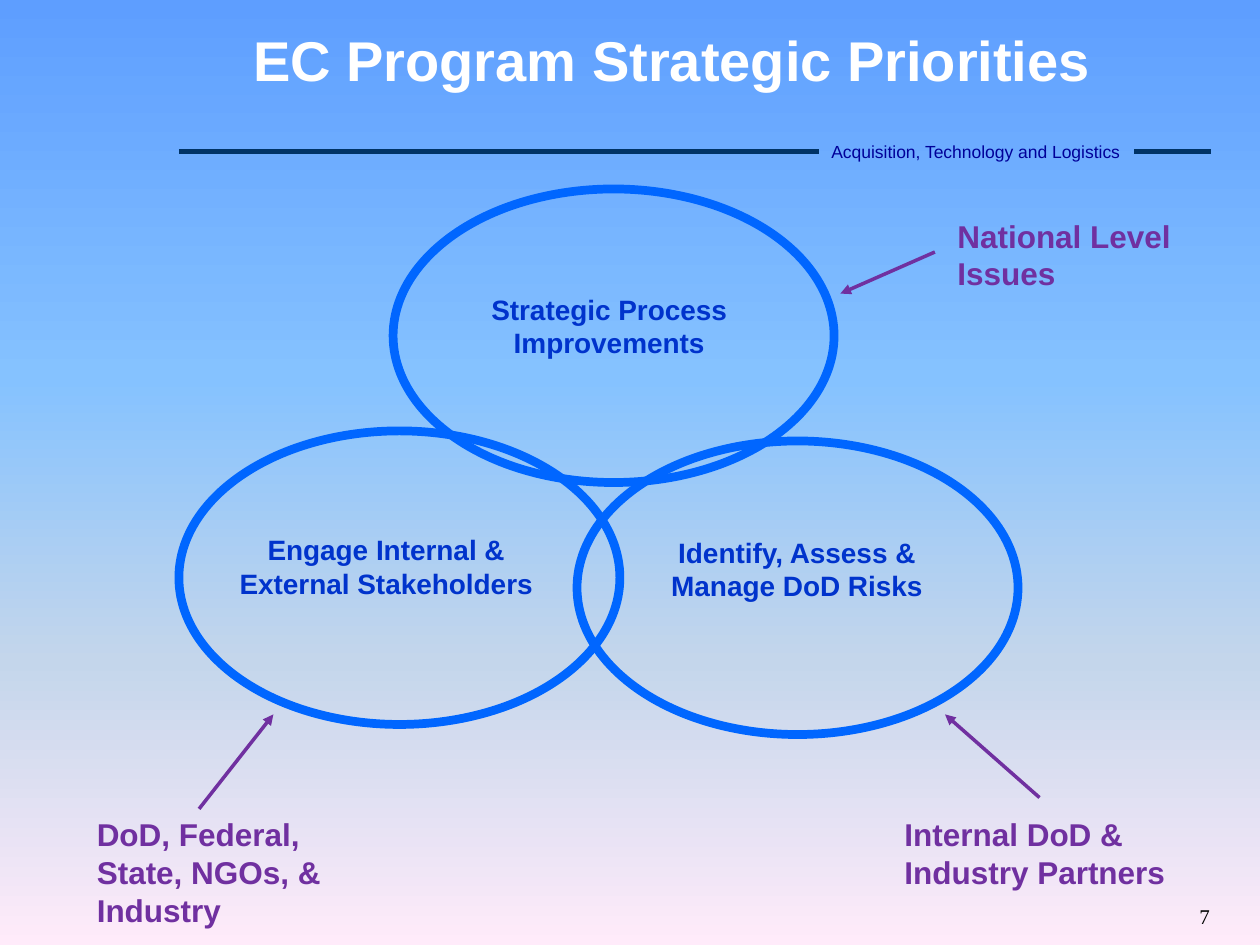
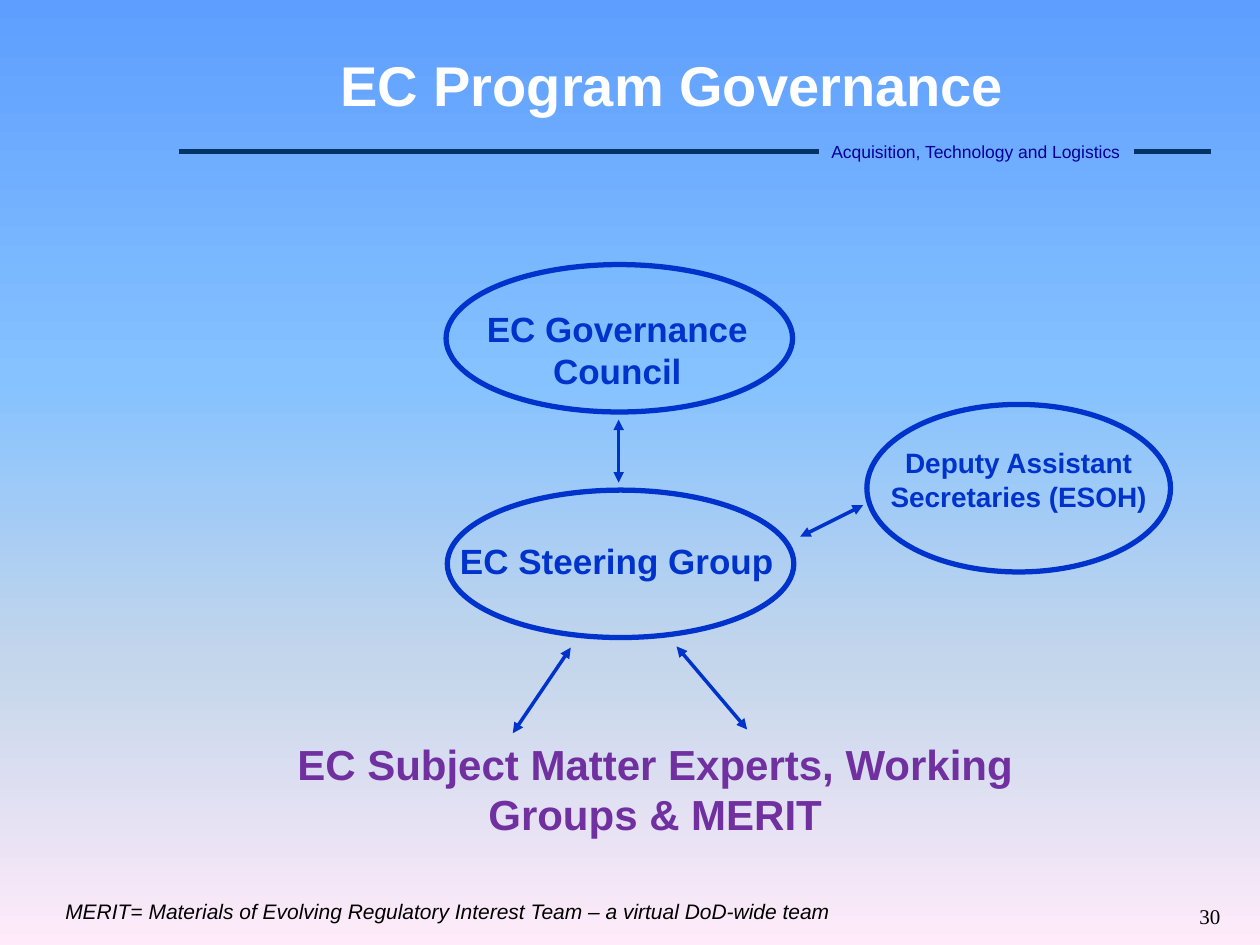
"""Build the two EC program slides."""
from copy import deepcopy

from lxml import etree
from pptx import Presentation
from pptx.dml.color import RGBColor
from pptx.enum.shapes import MSO_CONNECTOR, MSO_SHAPE
from pptx.enum.text import MSO_ANCHOR, PP_ALIGN
from pptx.oxml.ns import qn
from pptx.util import Inches, Pt

STRAIGHT, ELLIPSE = MSO_CONNECTOR.STRAIGHT, MSO_SHAPE.OVAL
LEFT, CENTER = PP_ALIGN.LEFT, PP_ALIGN.CENTER
TOP, MIDDLE = MSO_ANCHOR.TOP, MSO_ANCHOR.MIDDLE
NAVY, LABEL_BLUE, RING_BLUE, BLUE = "003366", "000099", "0066FF", "0033CC"
PURPLE, WHITE, BLACK = "7030A0", "FFFFFF", "000000"
SKY = [(0, "5E9EFF"), (0.4, "85C2FF"), (0.7, "C4D6EB"), (1, "FFEBFA")]


def rgb(color):
    """Turn a hex string into a colour."""
    return RGBColor.from_string(color)


def paint_background(master):
    """Give every slide the vertical sky gradient."""
    fill = master.background.fill
    fill.gradient()
    fill.gradient_angle = 270
    stops = master.element.find(".//" + qn("a:gsLst"))
    while len(stops) < len(SKY):
        stops.append(deepcopy(stops[0]))
    for stop, (position, color) in zip(fill.gradient_stops, SKY):
        stop.position = position
        stop.color.rgb = rgb(color)


def add_text(s, text, box, size, color, align=LEFT, anchor=TOP, wrap=True, **font):
    """Add a one-paragraph text box."""
    tf = s.shapes.add_textbox(*map(Inches, box)).text_frame
    tf.word_wrap = wrap
    tf.vertical_anchor = anchor
    p = tf.paragraphs[0]
    p.alignment = align
    r = p.add_run()
    r.text = text
    r.font.color.rgb = rgb(color)
    for name, value in {"name": "Arial", "size": Pt(size), **font}.items():
        setattr(r.font, name, value)


def add_line(s, start, end, color, width, ends=()):
    """Add a straight line with triangles at the named ends."""
    line = s.shapes.add_connector(STRAIGHT, *map(Inches, (*start, *end)))
    line.line.color.rgb = rgb(color)
    line.line.width = Pt(width)
    sp = line.element.spPr
    for end_tag in ends:
        etree.SubElement(sp.find(qn("a:ln")), qn(end_tag), type="triangle")
    etree.SubElement(sp, qn("a:effectLst"))


def add_arrow(s, start, end, color, both=False):
    """Add an arrow that points one way or both ways."""
    add_line(s, start, end, color, 2, ("a:headEnd", "a:tailEnd") if both else ("a:tailEnd",))


def add_ring(s, box, color, width):
    """Add an unfilled ellipse."""
    sp = s.shapes.add_shape(ELLIPSE, *map(Inches, box))
    sp.shadow.inherit = False
    sp.fill.background()
    sp.line.color.rgb = rgb(color)
    sp.line.width = Pt(width)


def add_slide(prs, title, title_top, title_height, number):
    """Add a slide with title, band and page number."""
    s = prs.slides.add_slide(prs.slide_layouts[6])
    add_text(s, title, (1, title_top, 8.67, title_height), 32, WHITE, CENTER, MIDDLE, bold=True)
    for start, end in ((1.42, 6.5), (9, 9.61)):
        add_line(s, (start, 1.2), (end, 1.2), NAVY, 3)
    add_text(s, "Acquisition, Technology and Logistics", (6.5, 1.07, 2.5, 0.27),
             10, LABEL_BLUE, wrap=False)
    add_text(s, number, (9.42, 7.12, 0.58, 0.3), 12, BLACK, name="Times New Roman")
    return s


def add_priorities(prs):
    """Build the slide of three overlapping priorities."""
    s = add_slide(prs, "EC Program Strategic Priorities", 0.11, 0.72, "7")
    priorities = [
        ("Strategic Process Improvements", (3.12, 1.5), (3.46, 2.27)),
        ("Engage Internal & External Stakeholders", (1.42, 3.42), (1.69, 4.18)),
        ("Identify, Assess & Manage DoD Risks", (4.58, 3.5), (4.95, 4.2)),
    ]
    for text, ring_at, text_at in priorities:
        add_ring(s, (*ring_at, 3.5, 2.33), RING_BLUE, 5)
        add_text(s, text, (*text_at, 2.75, 1.3), 16, BLUE, CENTER, bold=True)
    participants = [
        ("National Level Issues", (7.5, 1.67, 2.5, 0.7), (7.42, 2), (6.67, 2.33)),
        ("Internal DoD & Industry Partners", (7.08, 6.42, 2.5, 0.7), (8.25, 6.33), (7.5, 5.67)),
        ("DoD, Federal, State, NGOs, & Industry", (0.67, 6.42, 2.5, 1), (1.58, 6.42), (2.17, 5.67)),
    ]
    for text, box, start, end in participants:
        add_text(s, text, box, 18, PURPLE, bold=True)
        add_arrow(s, start, end, PURPLE)


def add_governance(prs):
    """Build the slide of governance bodies."""
    s = add_slide(prs, "EC Program Governance", 0.25, 0.83, "30")
    bodies = [
        ("EC Governance Council", 20, (3.54, 2.1, 2.75, 1.17), (3.73, 2.39, 2.34, 0.77)),
        ("EC Steering Group", 20, (3.55, 3.89, 2.75, 1.17), (3.52, 4.23, 2.75, 0.43)),
        ("Deputy Assistant Secretaries (ESOH)", 16, (6.88, 3.21, 2.41, 1.33),
         (6.92, 3.49, 2.33, 0.64)),
    ]
    for text, size, ring, box in bodies:
        add_ring(s, ring, BLUE, 3)
        add_text(s, text, box, size, BLUE, CENTER, bold=True)
    links = [
        ((4.91, 3.83), (4.91, 3.33)),
        ((6.35, 4.26), (6.85, 4.01)),
        ((4.07, 5.82), (4.53, 5.14)),
        ((5.93, 5.79), (5.37, 5.13)),
    ]
    for start, end in links:
        add_arrow(s, start, end, BLUE, both=True)
    add_text(s, "EC Subject Matter Experts, Working Groups & MERIT",
             (2.16, 5.81, 6.08, 0.91), 24, PURPLE, CENTER, bold=True)
    add_text(s, "MERIT= Materials of Evolving Regulatory Interest Team – a virtual DoD-wide team",
             (0.42, 7.08, 8.67, 0.3), 12, BLACK, italic=True)


def main():
    """Build and save the deck."""
    prs = Presentation()
    prs.slide_width, prs.slide_height = Inches(10), Inches(7.5)
    paint_background(prs.slide_master)
    add_priorities(prs)
    add_governance(prs)
    prs.save("out.pptx")


if __name__ == "__main__":
    main()
